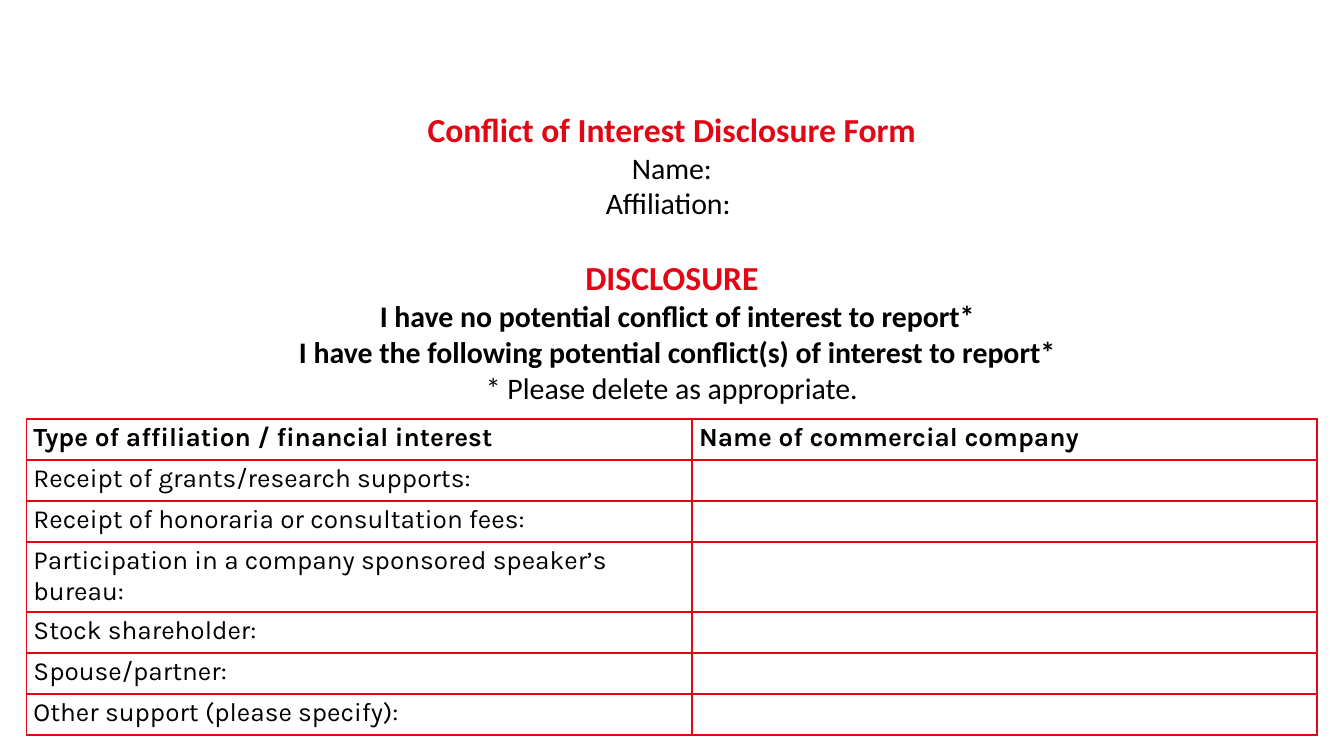
from dataclasses import dataclass

from lxml import etree
from pptx import Presentation
from pptx.dml.color import RGBColor
from pptx.enum.text import MSO_ANCHOR, PP_ALIGN
from pptx.oxml.ns import qn
from pptx.util import Pt

CENTER = PP_ALIGN.CENTER
LEFT = PP_ALIGN.LEFT
TOP = MSO_ANCHOR.TOP


@dataclass(frozen=True)
class Theme:
    red: str = "E30614"
    black: str = "000000"
    heading_font: str = "Calibri"
    table_font: str = "Karla"
    heading_size: float = 18
    body_size: float = 16
    table_size: float = 14
    border_width: float = 1


@dataclass(frozen=True)
class Line:
    text: str
    heading: bool = False
    bold: bool = False
    space_before: float = 0
    margin_left: float = 0
    margin_right: float = 0


THEME = Theme()

FORM_LINES = [
    Line("Conflict of Interest Disclosure Form", heading=True, bold=True),
    Line("Name:"),
    Line("Affiliation:", margin_right=4),
    Line("DISCLOSURE", heading=True, bold=True, space_before=19.5),
    Line("I have no potential conflict of interest to report*", bold=True, margin_left=6),
    Line("I have the following potential conflict(s) of interest to report*", bold=True, margin_left=6),
    Line("* Please delete as appropriate."),
]

TABLE_HEADERS = ["Type of affiliation / financial interest", "Name of commercial company"]
INTERESTS = [
    "Receipt of grants/research supports:",
    "Receipt of honoraria or consultation fees:",
    "Participation in a company sponsored speaker’s bureau:",
    "Stock shareholder:",
    "Spouse/partner:",
    "Other support (please specify):",
]
COLUMN_WIDTHS = [356.6, 334.8]
ROW_HEIGHT = 21.95


def write_text(para, text: str, *, font: str, size: float, color: str,
               bold: bool = False, align=LEFT) -> None:
    para.alignment = align
    if not text:
        etree.SubElement(para._p, qn("a:endParaRPr"), sz=str(int(size * 100)))
        return
    span = para.add_run()
    span.text = text
    span.font.name = font
    span.font.size = Pt(size)
    span.font.bold = bold
    span.font.color.rgb = RGBColor.from_string(color)


def set_insets(target, horizontal: float, vertical: float) -> None:
    target.margin_left = target.margin_right = Pt(horizontal)
    target.margin_top = target.margin_bottom = Pt(vertical)


def draw_form_heading(page, lines: list[Line]) -> None:
    box = page.shapes.add_textbox(Pt(0), Pt(55.5), Pt(720), Pt(153.5))
    frame = box.text_frame
    frame.word_wrap = True
    frame.vertical_anchor = TOP
    set_insets(frame, 5, 2.9)
    for index, line in enumerate(lines):
        para = frame.add_paragraph() if index else frame.paragraphs[0]
        write_text(
            para, line.text, font=THEME.heading_font, bold=line.bold, align=CENTER,
            size=THEME.heading_size if line.heading else THEME.body_size,
            color=THEME.red if line.heading else THEME.black,
        )
        if line.space_before:
            para.space_before = Pt(line.space_before)
        properties = para._p.get_or_add_pPr()
        properties.set("marL", str(Pt(line.margin_left)))
        properties.set("marR", str(Pt(line.margin_right)))


def add_borders(cell) -> None:
    properties = cell._tc.get_or_add_tcPr()
    for position, side in enumerate(("lnL", "lnR", "lnT", "lnB")):
        border = etree.Element(qn(f"a:{side}"), w=str(Pt(THEME.border_width)))
        fill = etree.SubElement(border, qn("a:solidFill"))
        etree.SubElement(fill, qn("a:srgbClr"), val=THEME.red)
        properties.insert(position, border)


def draw_interest_table(page, rows: list[list[str]]) -> None:
    frame = page.shapes.add_table(
        len(rows), len(COLUMN_WIDTHS), Pt(14.2), Pt(224.6),
        Pt(sum(COLUMN_WIDTHS)), Pt(ROW_HEIGHT * len(rows)),
    )
    table = frame.table
    table.first_row = False
    table.horz_banding = False
    for column, width in zip(table.columns, COLUMN_WIDTHS):
        column.width = Pt(width)
    for row_index, texts in enumerate(rows):
        table.rows[row_index].height = Pt(ROW_HEIGHT)
        for column_index, text in enumerate(texts):
            cell = table.cell(row_index, column_index)
            cell.fill.background()
            cell.vertical_anchor = TOP
            set_insets(cell, 3.75, 1.9)
            add_borders(cell)
            write_text(
                cell.text_frame.paragraphs[0], text, font=THEME.table_font,
                size=THEME.table_size, color=THEME.black, bold=row_index == 0,
            )


def main() -> None:
    deck = Presentation()
    deck.slide_width = Pt(720)
    deck.slide_height = Pt(405)
    page = deck.slides.add_slide(deck.slide_layouts[6])
    draw_form_heading(page, FORM_LINES)
    draw_interest_table(page, [TABLE_HEADERS] + [[interest, ""] for interest in INTERESTS])
    deck.save("out.pptx")


if __name__ == "__main__":
    main()
